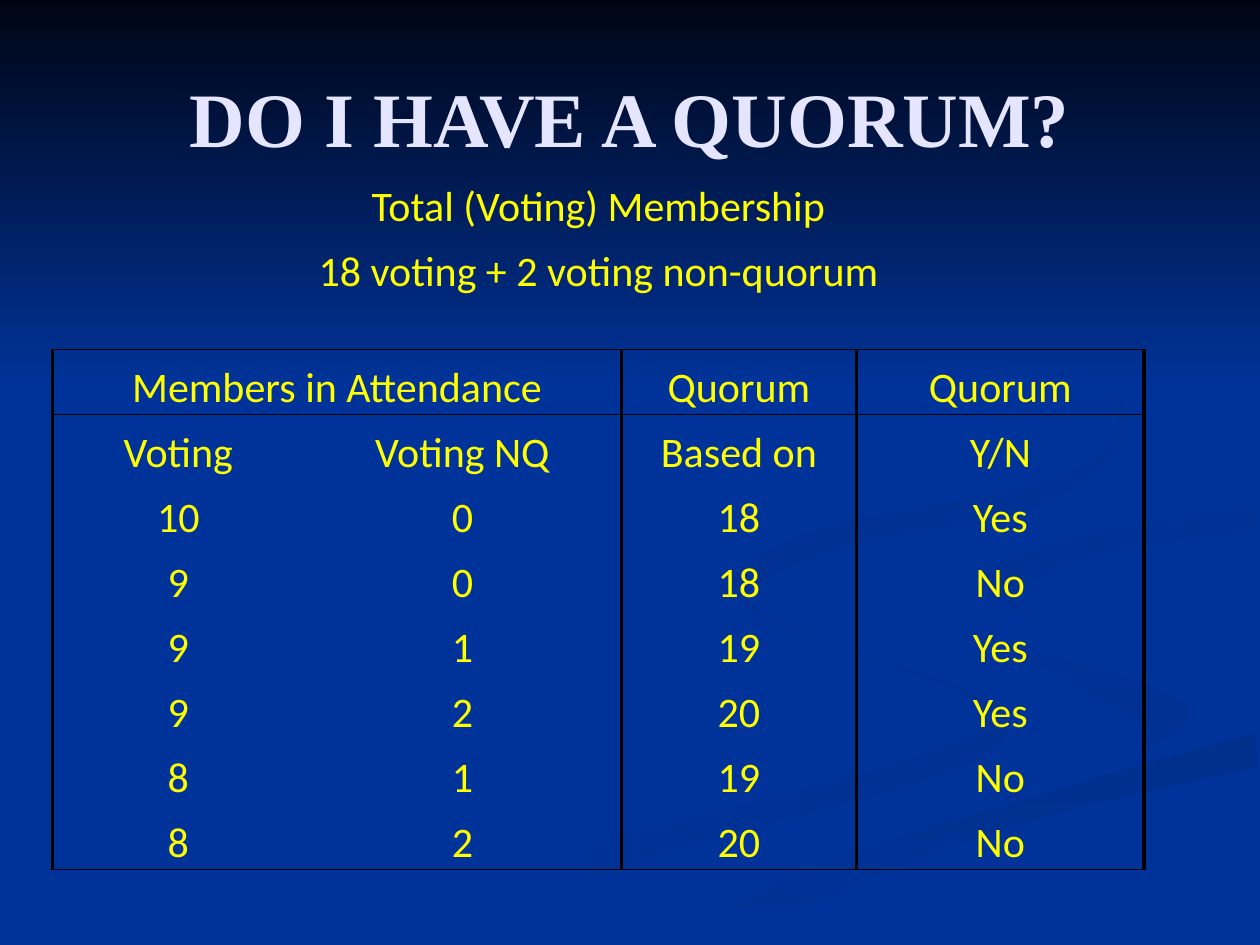
from lxml import etree
from pptx import Presentation
from pptx.dml.color import RGBColor
from pptx.enum.shapes import MSO_SHAPE
from pptx.enum.text import MSO_ANCHOR, PP_ALIGN
from pptx.oxml.ns import qn
from pptx.util import Inches, Pt

RECT = MSO_SHAPE.RECTANGLE
CENTER = PP_ALIGN.CENTER
MIDDLE, BOTTOM = MSO_ANCHOR.MIDDLE, MSO_ANCHOR.BOTTOM
PLAIN = "{2D5ABB26-0587-4C30-8999-92F81FD0307C}"
BLUE, YELLOW, BLACK = "003399", "FFFF00", "000000"
COLS = [1.99, 2.52, 1.87, 2.28]
ROW, GAP = Inches(5.16) // 10, Inches(0.41)
HEAD, SPACE = 3, 2
STEPS = 5

ROWS = [
    ["Total (Voting) Membership", "", "", ""],
    ["18 voting + 2 voting non-quorum", "", "", ""],
    ["", "", "", ""],
    ["Members in Attendance", "", "Quorum", "Quorum"],
    ["Voting", "Voting NQ", "Based on", "Y/N"],
    ["10", "0", "18", "Yes"],
    ["9", "0", "18", "No"],
    ["9", "1", "19", "Yes"],
    ["9", "2", "20", "Yes"],
    ["8", "1", "19", "No"],
    ["8", "2", "20", "No"],
]
SPANS = [(0, 3), (1, 3), (HEAD, 1)]

RIBBONS = [
    ([BLUE, "003193"], 0, [
        [(5.75, 4.59), (5.94, 4.85), (6.82, 5.19), (7.81, 5.53), (8, 5.81),
         (7.4, 6.18), (4.99, 6.87), (3.61, 7.49)],
        [(3, 7.49), (4.58, 6.74), (6.99, 6.09), (7.86, 5.66), (6.79, 5.19),
         (5.7, 4.72)]]),
    ([BLUE, "003193"], 45, [
        [(7.24, 4.64), (7.58, 4.98), (9.05, 5.4), (9.43, 5.7), (8.94, 6.05)],
        [(9.18, 5.81), (8.38, 5.36), (7.33, 4.88)]]),
    (["002F8C", BLUE], 90, [
        [(5.03, 7.49), (6.3, 6.93), (8.31, 6.29), (9.98, 5.81)],
        [(9.98, 6.09), (7.85, 6.61), (5.71, 7.49)]]),
    ([BLUE], 0, [
        [(9.99, 3.87), (8.3, 4.15), (7.25, 4.64), (7.75, 5.03), (9.05, 5.4),
         (9.4, 5.83), (7.04, 6.55), (4.77, 7.49)],
        [(5.19, 7.47), (6.96, 6.69), (9.99, 5.81)],
        [(9.99, 5.38), (8.32, 4.98), (7.82, 4.6), (8.5, 4.27), (9.99, 4.02)]]),
    (["003091", BLUE], 45, [
        [(9.98, 4.02), (8.49, 4.27), (7.81, 4.6), (8.26, 4.96)],
        [(8.05, 4.72), (8.59, 4.43), (9.98, 4.2)]]),
    (["002F8E", BLUE], 45, [
        [(7.62, 2.33), (8.64, 2.91), (8.94, 3.44), (8.25, 4.02), (6.83, 4.3),
         (5.93, 4.7), (6.22, 5)],
        [(5.77, 4.62), (6.49, 4.2), (8.3, 3.82), (8.89, 3.35), (8.46, 2.79)]]),
]


def color(code):
    return RGBColor.from_string(code)


def blend(a, b, c, d, t):
    bend = (2 * a - 5 * b + 4 * c - d) * t ** 2 + (3 * b - a - 3 * c + d) * t ** 3
    return b + ((c - a) * t + bend) / 2


def smooth(edge):
    knots = [edge[0], *edge, edge[-1]]
    dots = []
    for group in zip(knots, knots[1:], knots[2:], knots[3:]):
        for step in range(STEPS):
            dots.append([Inches(blend(*axis, step / STEPS)) for axis in zip(*group)])
    return dots + [[Inches(size) for size in edge[-1]]]


def paint(shape, hues, angle):
    shape.shadow.inherit = False
    shape.line.fill.background()
    fill = shape.fill
    if len(hues) == 1:
        fill.solid()
        fill.fore_color.rgb = color(hues[0])
        return
    fill.gradient()
    fill.gradient_angle = -angle % 360
    for stop, hue in zip(fill.gradient_stops, hues):
        stop.color.rgb = color(hue)


def add_ribbon(slide, hues, angle, edges):
    dots = [dot for edge in edges for dot in smooth(edge)]
    form = slide.shapes.build_freeform(*dots[0], scale=1.0)
    form.add_line_segments(dots[1:], close=True)
    paint(form.convert_to_shape(), hues, angle)


def style(para, face, size, hue, bold=False):
    para.alignment = CENTER
    for run in para.runs:
        font = run.font
        font.name, font.size, font.bold = face, Pt(size), bold
        font.color.rgb = color(hue)


def add_title(slide, text):
    box = slide.shapes.add_textbox(Inches(0.5), Inches(0.3), Inches(9), Inches(1.25))
    frame = box.text_frame
    frame.word_wrap = True
    frame.vertical_anchor = MIDDLE
    frame.text = text
    style(frame.paragraphs[0], "Times New Roman", 44, "E5E5FF", True)


def set_edges(cell, edges):
    props = cell._tc.get_or_add_tcPr()
    for spot, (side, width) in enumerate(edges):
        line = etree.Element(qn("a:ln" + side), w=str(Pt(width)))
        fill = etree.SubElement(line, qn("a:solidFill"))
        etree.SubElement(fill, qn("a:srgbClr"), val=BLACK)
        props.insert(spot, line)


def find_edges(row, col):
    last = len(ROWS) - 1
    rules = [
        ("L", 2, row >= HEAD and col != 1),
        ("R", 2, row >= HEAD and col != 0),
        ("T", 0.5, row == HEAD),
        ("B", 0.5, row in (SPACE, last)),
    ]
    return [(side, width) for side, width, on in rules if on]


def fill_cell(cell, text, edges):
    cell.margin_left = cell.margin_right = cell.margin_top = Inches(0.01)
    cell.margin_bottom = 0
    cell.vertical_anchor = BOTTOM
    cell.fill.background()
    set_edges(cell, edges)
    if text:
        cell.text_frame.text = text
        style(cell.text_frame.paragraphs[0], "Calibri", 24, YELLOW)


def add_grid(slide):
    high = ROW * (len(ROWS) - 1) + GAP
    frame = slide.shapes.add_table(
        len(ROWS), len(COLS), Inches(0.42), Inches(1.33), Inches(sum(COLS)), high)
    table = frame.table
    table.first_row = table.horz_banding = False
    table._tbl.tblPr.find(qn("a:tableStyleId")).text = PLAIN
    for col, width in zip(table.columns, COLS):
        col.width = Inches(width)
    for r, texts in enumerate(ROWS):
        table.rows[r].height = GAP if r == SPACE else ROW
        for c, text in enumerate(texts):
            fill_cell(table.cell(r, c), text, find_edges(r, c))
    for r, end in SPANS:
        table.cell(r, 0).merge(table.cell(r, end))


def main():
    deck = Presentation()
    deck.slide_width, deck.slide_height = Inches(10), Inches(7.5)
    slide = deck.slides.add_slide(deck.slide_layouts[6])
    back = slide.background.fill
    back.solid()
    back.fore_color.rgb = color(BLUE)
    for hues, angle, edges in RIBBONS:
        add_ribbon(slide, hues, angle, edges)
    band = slide.shapes.add_shape(RECT, 0, 0, Inches(10), Inches(3.08))
    paint(band, ["000514", BLUE], 90)
    add_title(slide, "DO I HAVE A QUORUM?")
    add_grid(slide)
    deck.save("out.pptx")


if __name__ == "__main__":
    main()
